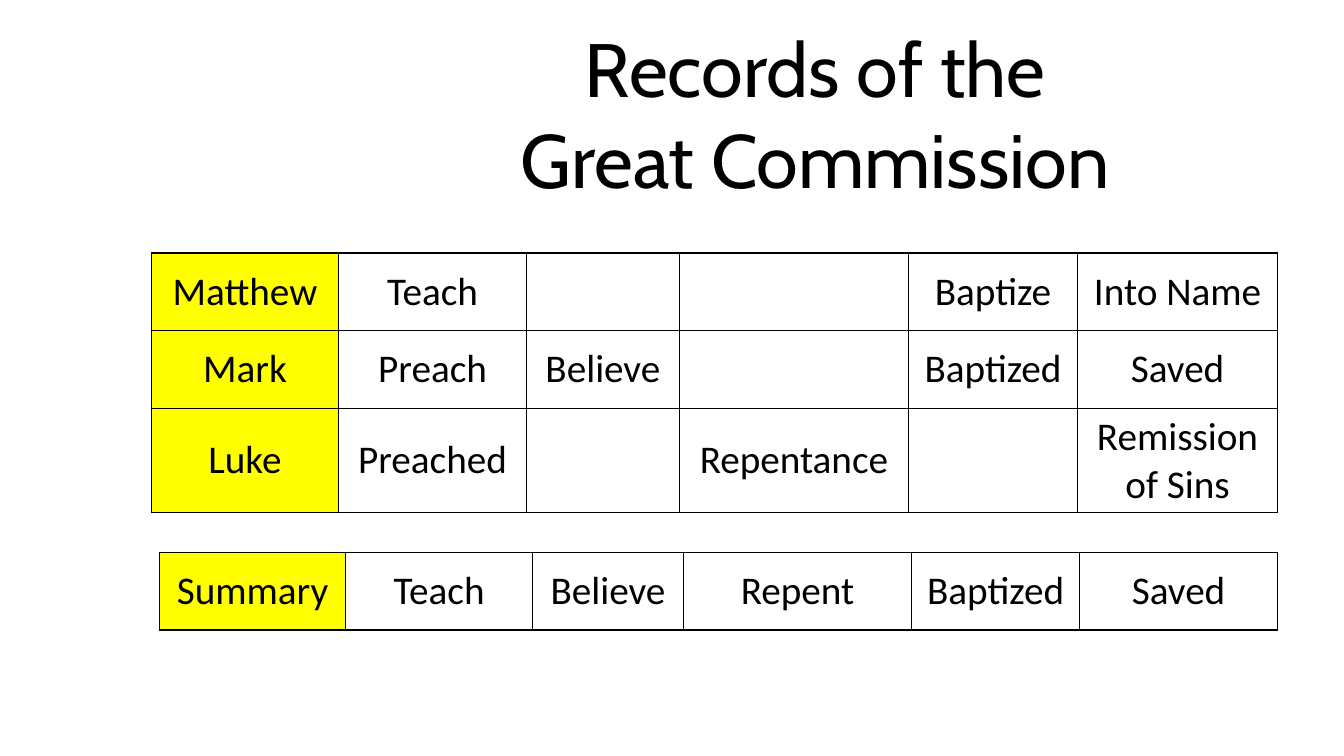
import pptx
import pptx.dml.color
import pptx.enum.text
import pptx.oxml
import pptx.oxml.ns
import pptx.util

PX = 9144
BLACK = pptx.dml.color.RGBColor(0, 0, 0)
YELLOW = pptx.dml.color.RGBColor(255, 255, 0)
CENTER = pptx.enum.text.PP_ALIGN.CENTER
MIDDLE = pptx.enum.text.MSO_ANCHOR.MIDDLE
TITLE_FONT = {"name": "Cabin", "size": pptx.util.Pt(54)}
CELL_FONT = {"name": "Calibri", "size": pptx.util.Pt(28)}
ROW_HEIGHT = 77

RECORDS = [
    ["Matthew", "Teach", "", "", "Baptize", "Into Name"],
    ["Mark", "Preach", "Believe", "", "Baptized", "Saved"],
    ["Luke", "Preached", "", "Repentance", "", "Remission of Sins"],
]
SUMMARY = [["Summary", "Teach", "Believe", "Repent", "Baptized", "Saved"]]


def emu(*lengths):
    """Turn px lengths into EMU."""
    return [pptx.util.Emu(n * PX) for n in lengths]


def write(p, text, font):
    """Write one centred black run into a paragraph."""
    p.alignment = CENTER
    r = p.add_run()
    r.text = text
    for key, value in font.items():
        setattr(r.font, key, value)
    r.font.color.rgb = BLACK


def add_title(s, box, lines):
    """Add the title, one paragraph per line."""
    tf = s.shapes.add_textbox(*emu(*box)).text_frame
    tf.word_wrap = True
    tf.auto_size = pptx.enum.text.MSO_AUTO_SIZE.SHAPE_TO_FIT_TEXT
    for i, line in enumerate(lines):
        write(tf.add_paragraph() if i else tf.paragraphs[0], line, TITLE_FONT)


def add_borders(cell):
    """Draw a thin black line on each side of a cell."""
    props = cell._tc.get_or_add_tcPr()
    for side in "LRTB":
        props.append(pptx.oxml.parse_xml(
            f'<a:ln{side} {pptx.oxml.ns.nsdecls("a")} w="12700"><a:solidFill>'
            f'<a:srgbClr val="{BLACK}"/></a:solidFill></a:ln{side}>'))


def add_grid(s, left, top, widths, rows):
    """Add a bordered table with a yellow first column."""
    box = emu(left, top, sum(widths), ROW_HEIGHT * len(rows))
    table = s.shapes.add_table(len(rows), len(widths), *box).table
    table.first_row = table.horz_banding = False
    for column, width in zip(table.columns, emu(*widths)):
        column.width = width
    for i, row in enumerate(rows):
        for j, text in enumerate(row):
            cell = table.cell(i, j)
            cell.vertical_anchor = MIDDLE
            add_borders(cell)
            if j:
                cell.fill.background()
            else:
                cell.fill.solid()
                cell.fill.fore_color.rgb = YELLOW
            if text:
                write(cell.text_frame.paragraphs[0], text, CELL_FONT)


def main():
    """Build and save the slide."""
    prs = pptx.Presentation()
    prs.slide_width, prs.slide_height = emu(1333, 750)
    s = prs.slides.add_slide(prs.slide_layouts[6])
    add_title(s, (425, 17, 767, 192), ["Records of the", "Great Commission"])
    add_grid(s, 150, 251, [186, 186, 152, 227, 168, 198], RECORDS)
    add_grid(s, 158, 548, [185, 185, 150, 226, 167, 196], SUMMARY)
    prs.save("out.pptx")


if __name__ == "__main__":
    main()
